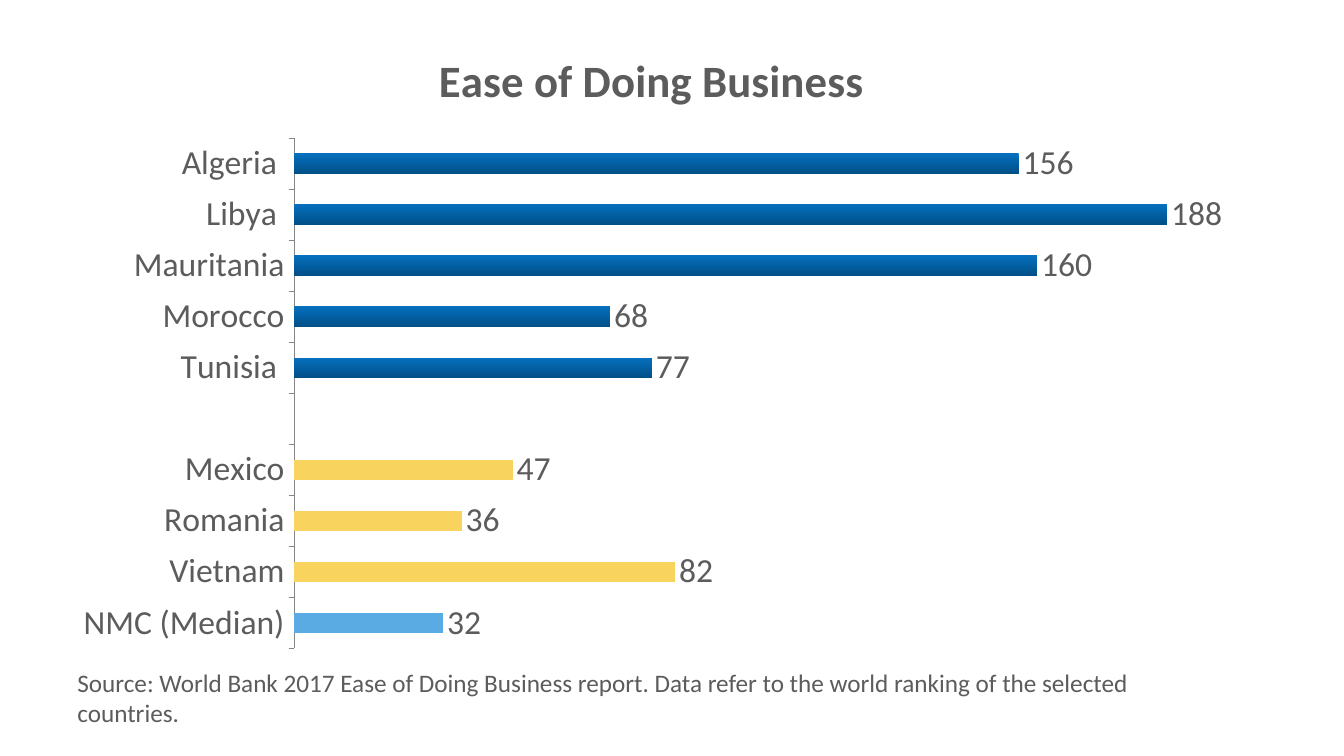
from dataclasses import dataclass

from lxml import etree
from pptx import Presentation
from pptx.chart.data import CategoryChartData
from pptx.dml.color import RGBColor
from pptx.enum.chart import XL_CHART_TYPE, XL_LABEL_POSITION, XL_TICK_MARK
from pptx.enum.text import MSO_AUTO_SIZE
from pptx.oxml.ns import qn
from pptx.util import Pt

BAR = XL_CHART_TYPE.BAR_CLUSTERED
OUTSIDE_END = XL_LABEL_POSITION.OUTSIDE_END
TICK_OUT, TICK_NONE = XL_TICK_MARK.OUTSIDE, XL_TICK_MARK.NONE
GROW = MSO_AUTO_SIZE.SHAPE_TO_FIT_TEXT


@dataclass(frozen=True)
class Theme:
    font: str = "Calibri"
    text: str = "5C5C5C"
    axis: str = "868686"
    bar_top: str = "0670BE"
    bar_bottom: str = "004F87"
    peer: str = "F8D35E"
    median: str = "5AAAE4"
    title_size: int = 32
    label_size: int = 24
    source_size: int = 18
    base_size: int = 10


class SlideBuilder:
    def __init__(self, slide, theme):
        self.slide = slide
        self.theme = theme

    def style(self, font, size, bold=False):
        font.name = self.theme.font
        font.size = Pt(size)
        font.bold = bold
        font.color.rgb = RGBColor.from_string(self.theme.text)

    def text(self, words, left, top, width, height):
        s = self.slide.shapes.add_textbox(Pt(left), Pt(top), Pt(width), Pt(height))
        tf = s.text_frame
        tf.word_wrap = True
        tf.auto_size = GROW
        r = tf.paragraphs[0].add_run()
        r.text = words
        self.style(r.font, self.theme.source_size)

    def bar_chart(self, title, rows, point_colors, plot, left, top, width, height):
        data = CategoryChartData()
        data.categories = [name for name, _ in rows]
        data.add_series("Series 1", [value for _, value in rows])
        chart = self.slide.shapes.add_chart(
            BAR, Pt(left), Pt(top), Pt(width), Pt(height), data).chart
        self.style(chart.font, self.theme.base_size)
        chart.has_legend = False
        chart.has_title = True
        r = chart.chart_title.text_frame.paragraphs[0].add_run()
        r.text = title
        self.style(r.font, self.theme.title_size, bold=True)
        chart.chart_title.include_in_layout = False

        self.axes(chart)
        self.bars(chart.plots[0], point_colors)
        self.place_plot(chart, plot)

    def axes(self, chart):
        cat, val = chart.category_axis, chart.value_axis
        cat.major_tick_mark = TICK_OUT
        cat.minor_tick_mark = TICK_NONE
        cat.has_major_gridlines = False
        cat.format.line.color.rgb = RGBColor.from_string(self.theme.axis)
        cat.format.line.width = Pt(0.75)
        self.style(cat.tick_labels.font, self.theme.label_size)
        val.visible = False
        val.has_major_gridlines = False
        val.minimum_scale, val.maximum_scale = 0, 200

    def bars(self, plot, point_colors):
        plot.gap_width = 150
        plot.vary_by_categories = False
        plot.has_data_labels = True
        labels = plot.data_labels
        labels.show_value = True
        labels.position = OUTSIDE_END
        self.style(labels.font, self.theme.label_size)

        series = plot.series[0]
        series.invert_if_negative = False
        fill = series.format.fill
        fill.gradient()
        fill.gradient_angle = 270
        shades = self.theme.bar_top, self.theme.bar_bottom
        for stop, color in zip(fill.gradient_stops, shades):
            stop.color.rgb = RGBColor.from_string(color)
        for i, color in enumerate(point_colors):
            fill = series.points[i].format.fill
            fill.solid()
            fill.fore_color.rgb = RGBColor.from_string(color)

    def place_plot(self, chart, plot):
        """Fix the inner plot area; plot holds x, y, w, h as shares of the chart."""
        area = chart._chartSpace.chart.plotArea
        for old in area.findall(qn("c:layout")):
            area.remove(old)
        layout = etree.Element(qn("c:layout"))
        area.insert(0, layout)
        manual = etree.SubElement(layout, qn("c:manualLayout"))
        settings = [("layoutTarget", "inner"), ("xMode", "edge"), ("yMode", "edge")]
        settings += zip("xywh", plot)
        for tag, value in settings:
            etree.SubElement(manual, qn(f"c:{tag}")).set("val", str(value))


def main():
    prs = Presentation()
    prs.slide_width, prs.slide_height = Pt(960), Pt(540)
    theme = Theme()
    page = SlideBuilder(prs.slides.add_slide(prs.slide_layouts[6]), theme)

    rankings = [
        ("NMC (Median)", 32),
        ("Vietnam", 82),
        ("Romania", 36),
        ("Mexico", 47),
        ("", None),
        ("Tunisia ", 77),
        ("Morocco", 68),
        ("Mauritania", 160),
        ("Libya ", 188),
        ("Algeria ", 156),
    ]
    page.text("Source: World Bank 2017 Ease of Doing Business report. "
              "Data refer to the world ranking of the selected countries.",
              48.2, 473, 817.2, 51)
    page.bar_chart("Ease of Doing Business", rankings,
                   [theme.median] + [theme.peer] * 3,
                   (0.2, 0.18, 0.78, 0.8), 40.3, 16.6, 850.3, 455.8)
    prs.save("out.pptx")


if __name__ == "__main__":
    main()
